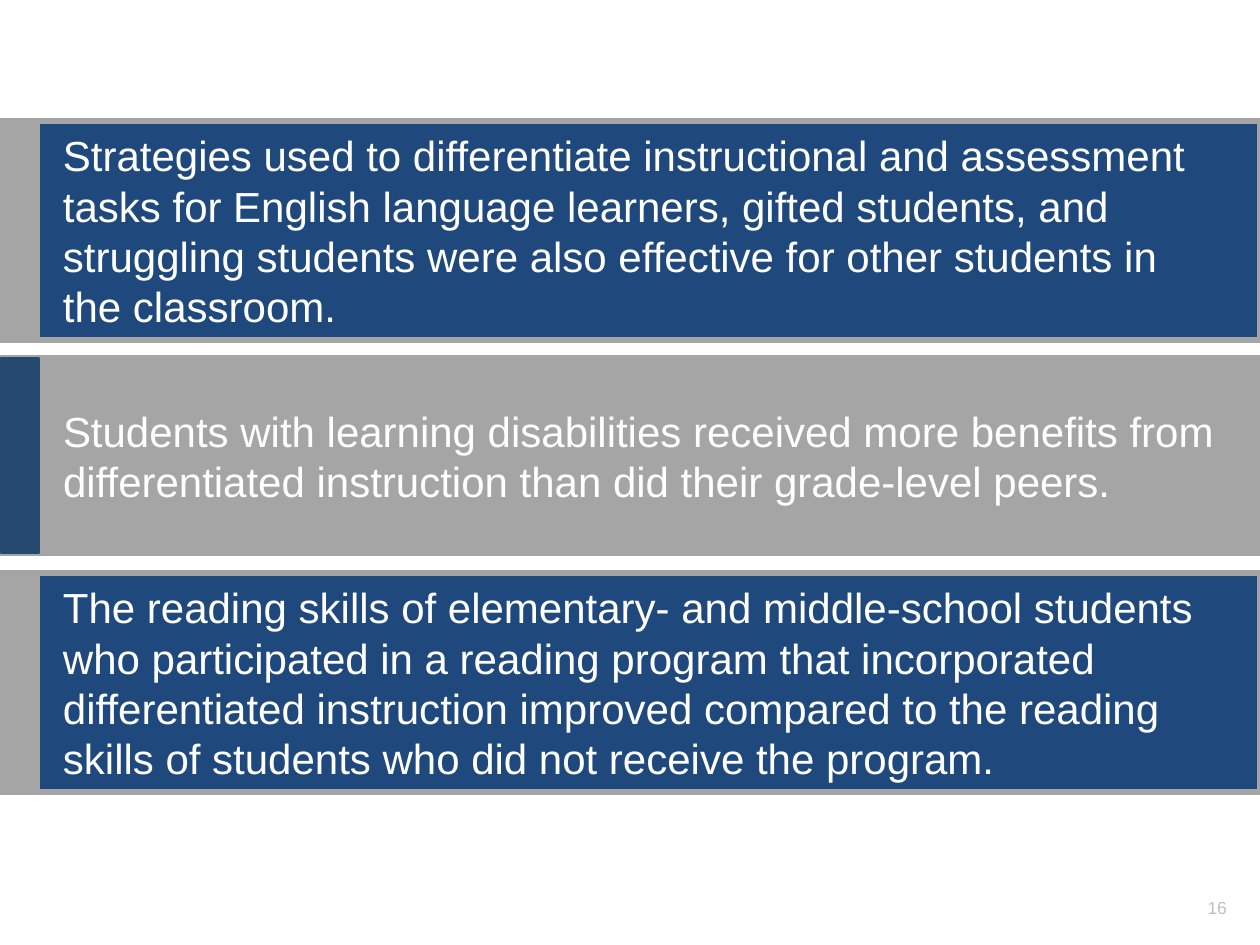
import pptx
import pptx.util
import pptx.dml.color
import pptx.enum.shapes
import pptx.enum.text

RGBColor = pptx.dml.color.RGBColor
BLUE = RGBColor(0x1F, 0x49, 0x7D)
SLATE = RGBColor(0x25, 0x49, 0x6F)
GREY = RGBColor(0xA5, 0xA5, 0xA5)
PALE_GREY = RGBColor(0xBF, 0xBF, 0xBF)
WHITE = RGBColor(0xFF, 0xFF, 0xFF)

PX = 914400 / 126
MIDDLE = pptx.enum.text.MSO_ANCHOR.MIDDLE
BOTTOM = pptx.enum.text.MSO_ANCHOR.BOTTOM
LEFT = pptx.enum.text.PP_ALIGN.LEFT
RIGHT = pptx.enum.text.PP_ALIGN.RIGHT

deck = pptx.Presentation()
deck.slide_width = round(1260 * PX)
deck.slide_height = round(945 * PX)
slide = deck.slides.add_slide(deck.slide_layouts[6])


def add_bar(left, top, width, height, fill, edge, edge_width):
    bar = slide.shapes.add_shape(
        pptx.enum.shapes.MSO_SHAPE.RECTANGLE,
        *(round(length * PX) for length in (left, top, width, height)))
    bar.shadow.inherit = False
    bar.fill.solid()
    bar.fill.fore_color.rgb = fill
    bar.line.color.rgb = edge
    bar.line.width = pptx.util.Pt(edge_width)


def add_label(left, top, width, height, text, size, color, align, anchor, inset, wrap):
    label = slide.shapes.add_textbox(
        *(round(length * PX) for length in (left, top, width, height)))
    frame = label.text_frame
    frame.word_wrap = wrap
    frame.vertical_anchor = anchor
    frame.margin_left = frame.margin_right = round(inset * PX)
    frame.margin_top = frame.margin_bottom = round(inset * PX)
    paragraph = frame.paragraphs[0]
    paragraph.text = text
    paragraph.alignment = align
    paragraph.font.name = "Arial"
    paragraph.font.size = pptx.util.Pt(size)
    paragraph.font.color.rgb = color


# top, height, text width, band colour, tab colour, finding
findings = [
    (121, 219, 1157, BLUE, GREY,
     "Strategies used to differentiate instructional and assessment tasks for "
     "English language learners, gifted students, and struggling students were "
     "also effective for other students in the classroom."),
    (358, 195, 1178, GREY, SLATE,
     "Students with learning disabilities received more benefits from "
     "differentiated instruction than did their grade-level peers."),
    (573, 219, 1157, BLUE, GREY,
     "The reading skills of elementary- and middle-school students who "
     "participated in a reading program that incorporated differentiated "
     "instruction improved compared to the reading skills of students who did "
     "not receive the program."),
]
for top, height, text_width, band_color, tab_color, finding in findings:
    add_bar(0, top, 1260, height, band_color, GREY, 3)
    add_bar(1, top, 38, height, tab_color, tab_color, 0.75)
    add_label(50, top, text_width, height, finding, 24, WHITE, LEFT, MIDDLE, 13, True)

add_label(1206, 897, 21, 21, "16", 10, PALE_GREY, RIGHT, BOTTOM, 0, False)

deck.save("out.pptx")
